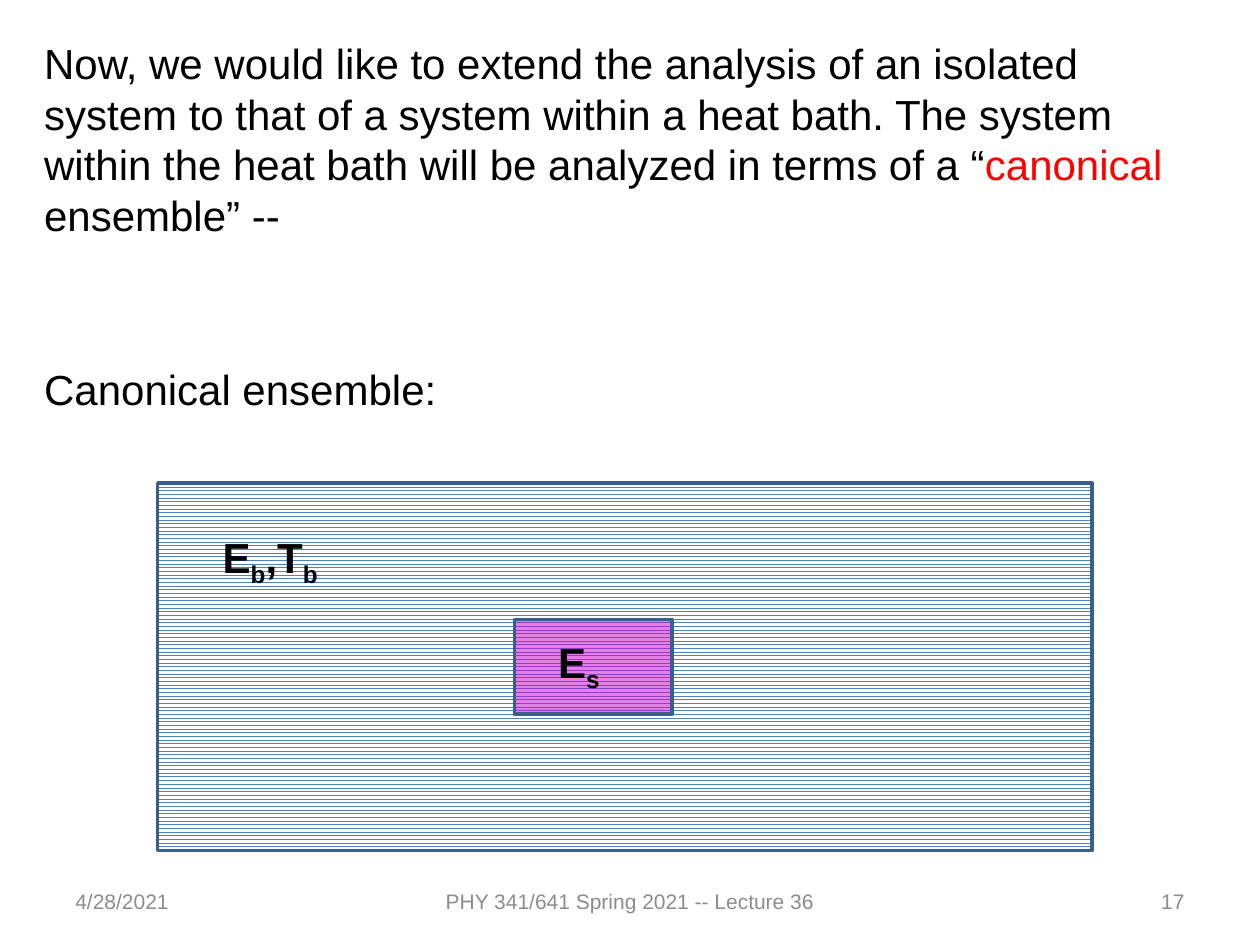
from lxml.etree import SubElement
from pptx import Presentation
from pptx.dml.color import RGBColor
from pptx.enum.dml import MSO_PATTERN
from pptx.enum.shapes import MSO_SHAPE
from pptx.enum.text import MSO_ANCHOR, PP_ALIGN
from pptx.oxml.ns import qn
from pptx.util import Cm, Pt


def color(hex_string):
    return RGBColor.from_string(hex_string)


def add_text(box, runs, formats, align=PP_ALIGN.LEFT, anchor=MSO_ANCHOR.TOP):
    """Add a text box; each run is (text, hex colour, is subscript)."""
    text_frame = slide.shapes.add_textbox(*map(Cm, box)).text_frame
    text_frame.word_wrap = True
    text_frame.vertical_anchor = anchor
    paragraph = text_frame.paragraphs[0]
    paragraph.alignment = align
    for text, hex_string, subscript in runs:
        run = paragraph.add_run()
        run.text = text
        for name, value in formats.items():
            setattr(run.font, name, value)
        run.font.color.rgb = color(hex_string)
        if subscript:
            run._r.get_or_add_rPr().set("baseline", "-25000")


presentation = Presentation()
presentation.slide_width = Cm(25.4)
presentation.slide_height = Cm(19.05)
slide = presentation.slides.add_slide(presentation.slide_layouts[6])

BLACK, RED, GRAY = "000000", "FF0000", "8C8C8C"
footer_format = {"name": "Arial", "size": Pt(12)}
body_format = {"name": "Arial", "size": Pt(24)}
label_format = {**body_format, "bold": True}

# Footer: date, course, slide number
for left, width, text, align in [
    (1.27, 5.93, "4/28/2021", PP_ALIGN.LEFT),
    (8.68, 8.04, "PHY 341/641 Spring 2021 -- Lecture 36", PP_ALIGN.CENTER),
    (18.2, 5.93, "17", PP_ALIGN.RIGHT),
]:
    add_text((left, 17.66, width, 1.01), [(text, GRAY, False)],
             footer_format, align, MSO_ANCHOR.MIDDLE)

# Heat bath with the system inside it
rectangles = []
for box in [(3.18, 9.74, 18.84, 7.41), (10.37, 12.49, 3.18, 1.91)]:
    shape = slide.shapes.add_shape(MSO_SHAPE.RECTANGLE, *map(Cm, box))
    shape.shadow.inherit = False
    shape.line.color.rgb = color("3A5F8C")
    shape.line.width = Pt(2)
    rectangles.append(shape)
heat_bath, system = rectangles

heat_bath.fill.patterned()
heat_bath.fill.pattern = MSO_PATTERN.ZIG_ZAG
heat_bath.fill.fore_color.rgb = color("4F81BD")
heat_bath.fill.back_color.rgb = color("FFFFFF")

system.fill.solid()
system.fill.fore_color.rgb = color("CC00CC")
system_color = system._element.spPr.find(qn("a:solidFill")).find(qn("a:srgbClr"))
SubElement(system_color, qn("a:alpha")).set("val", "50000")

# Energy and temperature labels
add_text((4.24, 10.58, 2.75, 1.28),
         [("E", BLACK, False), ("b", BLACK, True),
          (",T", BLACK, False), ("b", BLACK, True)], label_format)
add_text((11, 12.7, 2.33, 1.28),
         [("E", BLACK, False), ("s", BLACK, True)], label_format)

# Introduction and diagram heading
add_text((0.64, 0.64, 23.92, 4.36), [
    ("Now, we would like to extend the analysis of an isolated system to that "
     "of a system within a heat bath. The system within the heat bath will be "
     "analyzed in terms of a “", BLACK, False),
    ("canonical", RED, False),
    (" ensemble” --", BLACK, False),
], body_format)
add_text((0.64, 7.2, 21.8, 1.28),
         [("Canonical ensemble:", BLACK, False)], body_format)

presentation.save("out.pptx")
